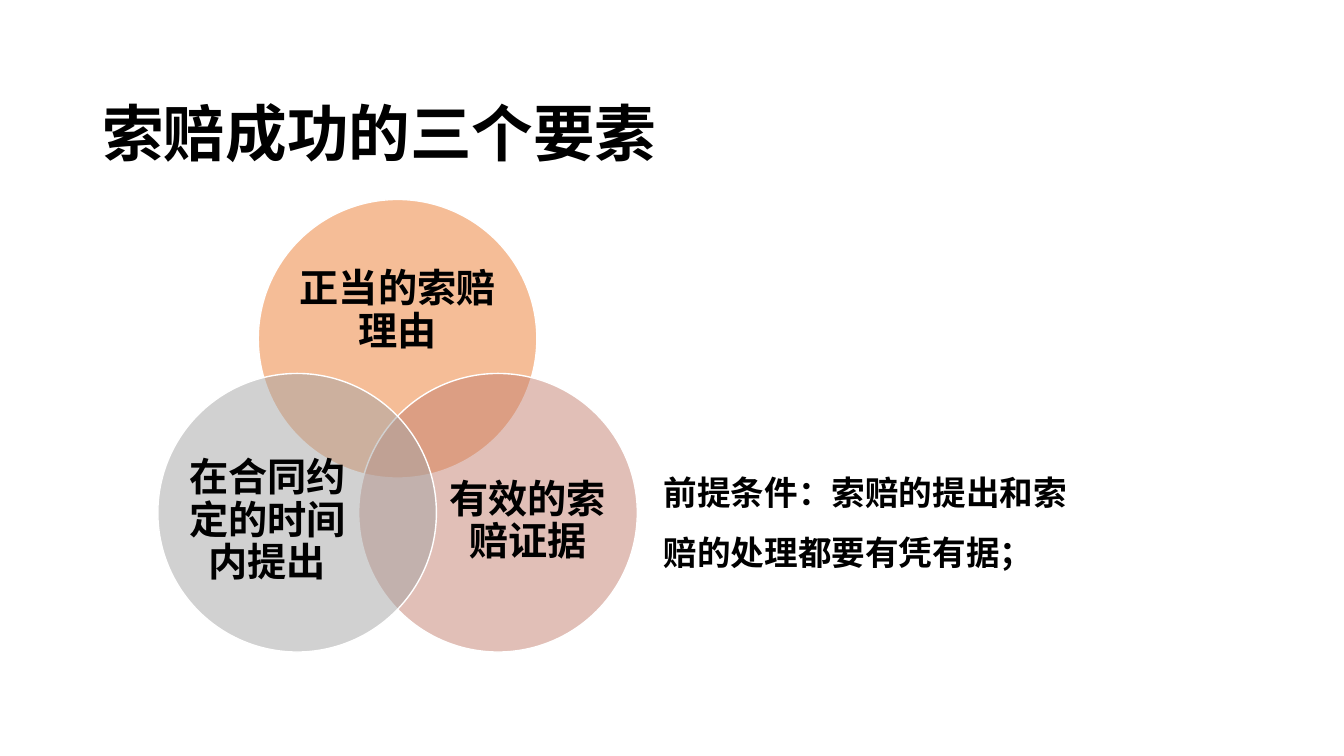
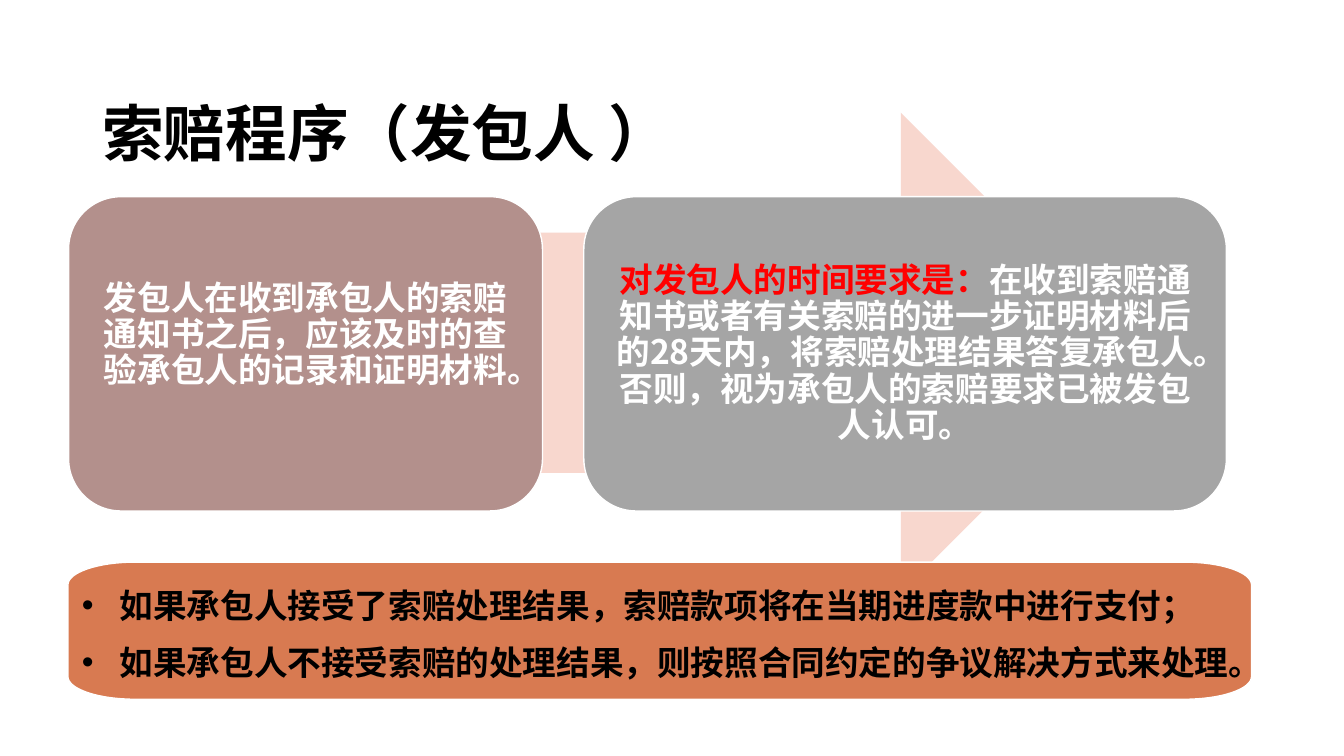
from math import cos, pi, sin, sqrt

from pptx import Presentation
from pptx.dml.color import RGBColor
from pptx.enum.shapes import MSO_SHAPE
from pptx.enum.text import MSO_ANCHOR, PP_ALIGN
from pptx.oxml.ns import qn
from pptx.util import Pt

COLORS = {
    "black": "000000", "white": "FFFFFF", "red": "FF0000",
    "orange": "ED7D31", "rose": "C48170", "gray": "A5A5A5",
    "arrow": "F8D7CE", "mauve": "B3908C", "band": "D87A51",
}
SERIF = "Times New Roman"
SANS = "Noto Sans CJK SC"


def rgb(name):
    return RGBColor.from_string(COLORS[name])


class SlideWriter:
    """Holds the shared style and the current slide."""

    def __init__(self, deck):
        self.deck = deck
        self.page = None

    def new_page(self, title):
        self.page = self.deck.slides.add_slide(self.deck.slide_layouts[6])
        self.text_box(66, 29, 828, 104, title, size=44, align=PP_ALIGN.JUSTIFY,
                      spacing=1.5, margins=(7.2, 3.6))

    def paint(self, shape, fill, line="white", opacity=None):
        shape.shadow.inherit = False
        shape.fill.solid()
        shape.fill.fore_color.rgb = rgb(fill)
        if opacity is not None:
            color = shape.fill._xPr.find(qn("a:solidFill"))[0]
            color.makeelement(qn("a:alpha"))
            alpha = color.makeelement(qn("a:alpha"), {"val": str(opacity * 1000)})
            color.append(alpha)
        if line:
            shape.line.color.rgb = rgb(line)
            shape.line.width = Pt(1)
        else:
            shape.line.fill.background()

    def shape(self, kind, left, top, width, height, fill, **style):
        shape = self.page.shapes.add_shape(kind, Pt(left), Pt(top), Pt(width), Pt(height))
        self.paint(shape, fill, **style)
        return shape

    def frame(self, shape, margins=(0, 0), anchor=MSO_ANCHOR.MIDDLE):
        frame = shape.text_frame
        frame.word_wrap = True
        frame.vertical_anchor = anchor
        frame.margin_left = frame.margin_right = Pt(margins[0])
        frame.margin_top = frame.margin_bottom = Pt(margins[1])
        return frame

    def style_paragraph(self, para, size, colors=("black",), align=PP_ALIGN.CENTER,
                        spacing=0.9, after=0, font=SERIF):
        para.alignment = align
        para.line_spacing = spacing
        para.space_after = Pt(after)
        for span, color in zip(para.runs, colors):
            span.font.size = Pt(size)
            span.font.bold = True
            span.font.name = font
            span.font.color.rgb = rgb(color)

    def text_box(self, left, top, width, height, text, margins=(0, 0),
                 anchor=MSO_ANCHOR.MIDDLE, **style):
        box = self.page.shapes.add_textbox(Pt(left), Pt(top), Pt(width), Pt(height))
        frame = self.frame(box, margins, anchor)
        frame.text = text
        self.style_paragraph(frame.paragraphs[0], **style)

    def card(self, left, top, width, height, fill, spans):
        """Rounded card; spans are (text, color) pairs."""
        card = self.shape(MSO_SHAPE.ROUNDED_RECTANGLE, left, top, width, height, fill)
        para = self.frame(card, (7.2, 7.2)).paragraphs[0]
        for text, _ in spans:
            para.add_run().text = text
        self.style_paragraph(para, 24, [color for _, color in spans], font=SANS)

    def bullet_band(self, left, top, width, height, corner, fill, items):
        """Band with elliptical corners and bulleted lines."""
        corner_x, corner_y = corner
        steps = 16
        centers = [(left + width - corner_x, top + height - corner_y),
                   (left + corner_x, top + height - corner_y),
                   (left + corner_x, top + corner_y),
                   (left + width - corner_x, top + corner_y)]
        points = []
        for quarter, (x, y) in enumerate(centers):
            for step in range(steps + 1):
                angle = (quarter + step / steps) * pi / 2
                points.append((Pt(x + corner_x * cos(angle)), Pt(y + corner_y * sin(angle))))
        builder = self.page.shapes.build_freeform(*points[0])
        builder.add_line_segments(points[1:], close=True)
        band = builder.convert_to_shape()
        self.paint(band, fill)
        frame = self.frame(band, (10, 6.5))
        frame.text = "\n".join(items)
        for para in frame.paragraphs:
            self.style_paragraph(para, 24, align=PP_ALIGN.LEFT, spacing=1.14, after=8.4)
            props = para._p.get_or_add_pPr()
            props.set("marL", str(Pt(27)))
            props.set("indent", str(Pt(-27)))
            for tag, attributes in (("a:buFont", {"typeface": "Arial"}),
                                    ("a:buChar", {"char": "•"})):
                props.append(props.makeelement(qn(tag), attributes))


def build_elements(writer):
    writer.new_page("索赔成功的三个要素")

    # Three circles centred on the corners of an equilateral triangle
    diameter, side = 199, 143.5
    top_left, top = 184.5, 142.5
    low = top + side * sqrt(3) / 2
    circles = [
        (top_left, top, "orange", (211, 178, 146, 89), "正当的索赔理由"),
        (top_left + side / 2, low, "rose", (317, 318, 120, 109), "有效的索赔证据"),
        (top_left - side / 2, low, "gray", (131, 318, 120, 109), "在合同约定的时间内提出"),
    ]
    for left, circle_top, fill, label_area, label in circles:
        writer.shape(MSO_SHAPE.OVAL, left, circle_top, diameter, diameter, fill, opacity=50)
        writer.text_box(*label_area, label, size=28)

    # Precondition
    writer.text_box(467, 319, 326, 89, "前提条件：索赔的提出和索赔的处理都要有凭有据；",
                    size=24, align=PP_ALIGN.LEFT, spacing=1.5, margins=(7.2, 3.6),
                    anchor=MSO_ANCHOR.TOP)


def build_procedure(writer):
    writer.new_page("索赔程序（发包人 ）")

    # Arrow behind the two steps
    writer.shape(MSO_SHAPE.RIGHT_ARROW, 111, 80.5, 704, 343, "arrow", line=None)
    writer.card(49, 140.5, 338.5, 224.5, "mauve", [
        ("发包人在收到承包人的索赔通知书之后，应该及时的查验承包人的记录和证明材料。 ", "white")])
    writer.card(417, 140.5, 459, 224.5, "gray", [
        ("对发包人的时间要求是：", "red"),
        ("在收到索赔通知书或者有关索赔的进一步证明材料后的28天内，将索赔处理结果答复承包人。"
         "否则，视为承包人的索赔要求已被发包人认可。", "white")])

    # Outcomes
    writer.bullet_band(48.5, 401.5, 845.5, 98, (48, 16.3), "band", [
        "如果承包人接受了索赔处理结果，索赔款项将在当期进度款中进行支付；",
        "如果承包人不接受索赔的处理结果，则按照合同约定的争议解决方式来处理。"])


def main():
    deck = Presentation()
    deck.slide_width, deck.slide_height = Pt(960), Pt(540)
    writer = SlideWriter(deck)
    build_elements(writer)
    build_procedure(writer)
    deck.save("out.pptx")


if __name__ == "__main__":
    main()
